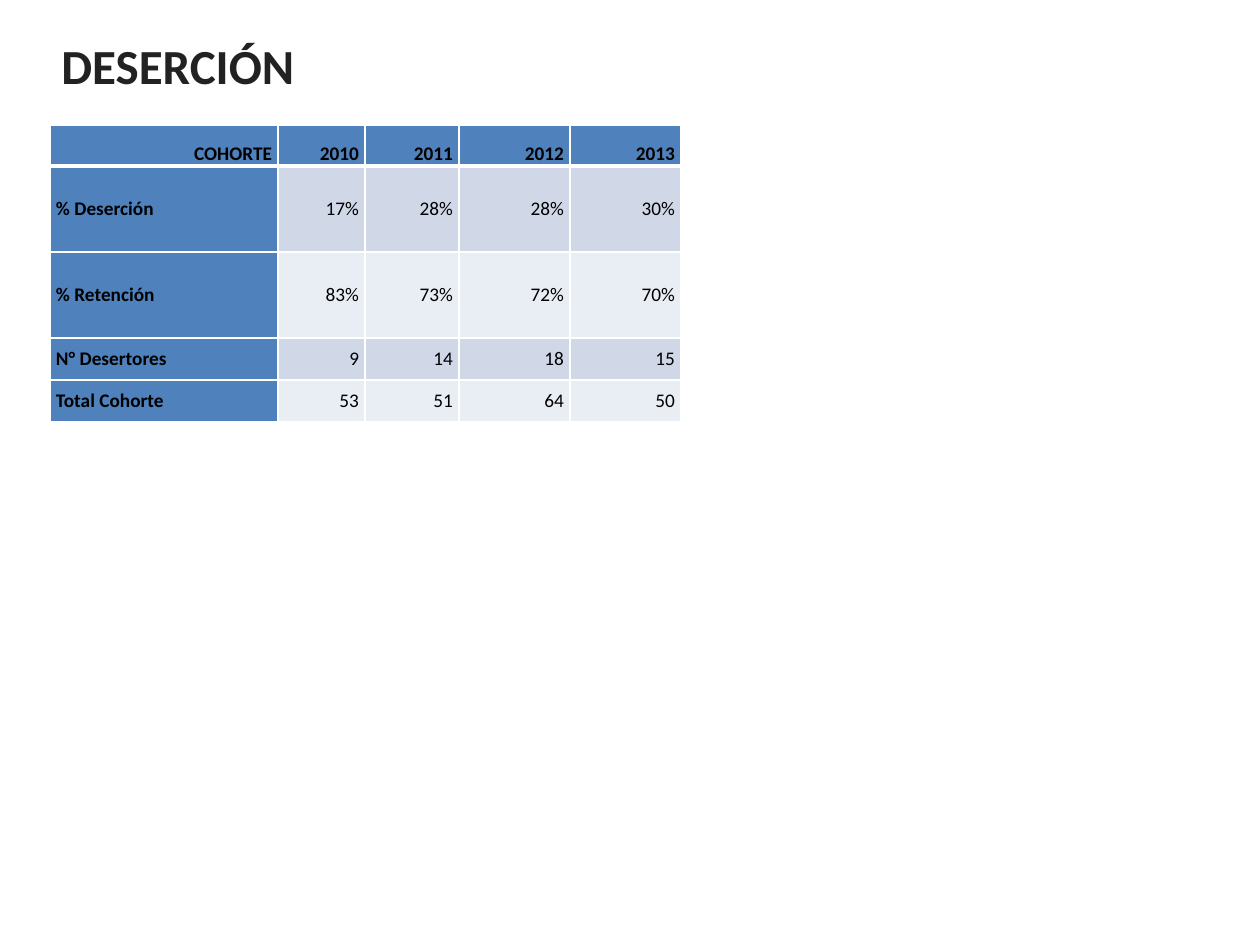
from lxml import etree
from pptx import Presentation
from pptx import util as u
from pptx.dml.color import RGBColor
from pptx.enum import text
from pptx.oxml.ns import qn

C = {"ink": "222222", "black": "000000", "white": "FFFFFF",
     "blue": "4F81BD", "band": "D0D8E8", "pale": "E9EDF4"}
FONT = "Calibri"
COLS = [228, 87, 94, 111, 111]
ROWS = [41, 86, 86, 42, 42]
COHORTS = [
    ["COHORTE", "2010", "2011", "2012", "2013"],
    ["% Deserción", "17%", "28%", "28%", "30%"],
    ["% Retención", "83%", "73%", "72%", "70%"],
    ["N° Desertores", "9", "14", "18", "15"],
    ["Total Cohorte", "53", "51", "64", "50"],
]


def px(n):
    return u.Emu(round(n * 914400 / 126))


def write(tf, content, size=11, color="black", bold=False, align=text.PP_ALIGN.LEFT):
    p = tf.paragraphs[0]
    p.alignment = align
    r = p.add_run()
    r.text = content
    r.font.name = FONT
    r.font.size = u.Pt(size)
    r.font.bold = bold
    r.font.color.rgb = RGBColor.from_string(C[color])


def add_title(s, content, x, y, w, h):
    tf = s.shapes.add_textbox(px(x), px(y), px(w), px(h)).text_frame
    tf.word_wrap = True
    tf.auto_size = text.MSO_AUTO_SIZE.SHAPE_TO_FIT_TEXT
    write(tf, content, size=28, color="ink", bold=True)


def set_borders(cell, bottom=1):
    tcPr = cell._tc.get_or_add_tcPr()
    widths = {"a:lnL": 1, "a:lnR": 1, "a:lnT": 1, "a:lnB": bottom}
    for i, (tag, width) in enumerate(widths.items()):
        ln = etree.Element(qn(tag), w=str(u.Pt(width)))
        fill = etree.SubElement(ln, qn("a:solidFill"))
        etree.SubElement(fill, qn("a:srgbClr"), val=C["white"])
        tcPr.insert(i, ln)


def format_cell(cell, content, row, col):
    header, label = row == 0, col == 0
    cell.margin_left = cell.margin_right = px(6)
    cell.margin_top = cell.margin_bottom = 0
    cell.vertical_anchor = text.MSO_ANCHOR.BOTTOM if header else text.MSO_ANCHOR.MIDDLE
    fill = "blue" if header or label else "band" if row % 2 else "pale"
    cell.fill.solid()
    cell.fill.fore_color.rgb = RGBColor.from_string(C[fill])
    set_borders(cell, bottom=3 if header else 1)
    left = label and not header
    write(cell.text_frame, content, bold=header or label,
          align=text.PP_ALIGN.LEFT if left else text.PP_ALIGN.RIGHT)


def add_cohort_table(s, x, y):
    table = s.shapes.add_table(len(ROWS), len(COLS), px(x), px(y),
                               px(sum(COLS)), px(sum(ROWS))).table
    for column, width in zip(table.columns, COLS):
        column.width = px(width)
    for row, height in zip(table.rows, ROWS):
        row.height = px(height)
    for i, values in enumerate(COHORTS):
        for j, value in enumerate(values):
            format_cell(table.cell(i, j), value, i, j)


def main():
    prs = Presentation()
    prs.slide_width, prs.slide_height = px(1260), px(945)
    s = prs.slides.add_slide(prs.slide_layouts[6])
    add_title(s, "DESERCIÓN", 49, 29, 1167, 72)
    add_cohort_table(s, 50, 125)
    prs.save("out.pptx")


if __name__ == "__main__":
    main()
